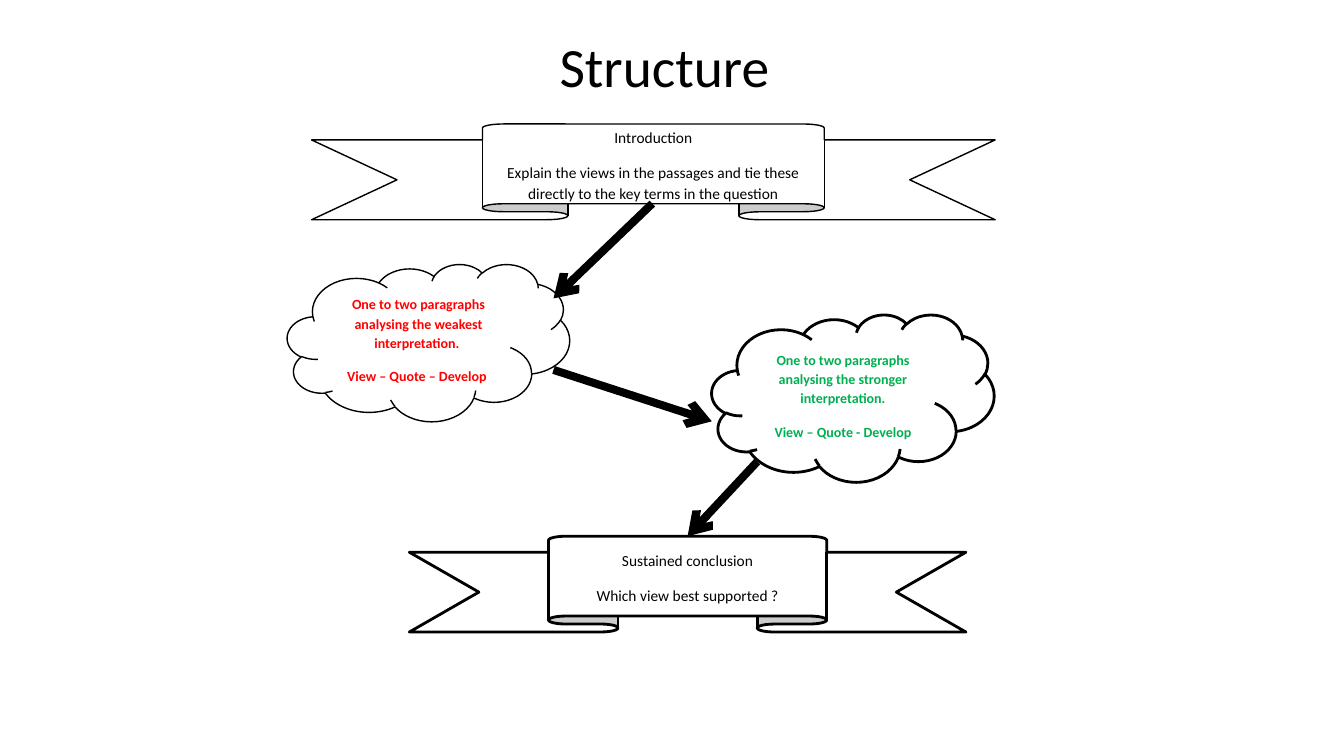
"""Build the essay structure slide: two banners, two clouds and linking arrows."""
from dataclasses import dataclass

from lxml.etree import SubElement
from pptx import Presentation
from pptx.dml.color import RGBColor
from pptx.enum.shapes import MSO_CONNECTOR as CONN, MSO_SHAPE as SHAPE
from pptx.enum.text import MSO_ANCHOR as ANCHOR, MSO_AUTO_SIZE as AUTO, PP_ALIGN as ALIGN
from pptx.oxml.ns import qn
from pptx.util import Inches, Pt

COLORS = {"black": "000000", "white": "FFFFFF", "red": "FF0000", "green": "00B050"}
FRAME = {"word_wrap": True, "auto_size": AUTO.NONE, "vertical_anchor": ANCHOR.MIDDLE}
TITLE_PARA = {"alignment": ALIGN.CENTER, "line_spacing": 0.9}
BODY_PARA = {"alignment": ALIGN.CENTER, "line_spacing": 1.15, "space_after": Pt(10)}


@dataclass
class Step:
    kind: SHAPE
    box: tuple[float, float, float, float]
    line: float
    lines: tuple[str, ...]
    size: float = 11
    color: str = "black"
    bold: bool = False


@dataclass
class Arrow:
    start: tuple[float, float]
    end: tuple[float, float]
    target: int | None = None


STEPS = [
    Step(SHAPE.UP_RIBBON, (3.09, 1.23, 6.78, 0.95), 1, (
        "Introduction",
        "Explain the views in the passages and tie these directly to the key terms in the question")),
    Step(SHAPE.CLOUD, (2.85, 2.62, 2.8, 1.56), 1, (
        "One to two paragraphs analysing the weakest interpretation. ",
        "View – Quote – Develop "), 10, "red", True),
    Step(SHAPE.CLOUD, (7.06, 3.12, 2.8, 1.66), 2, (
        "One to two paragraphs analysing the stronger interpretation.",
        "View – Quote - Develop"), 10, "green", True),
    Step(SHAPE.UP_RIBBON, (4.06, 5.32, 5.52, 0.95), 2, (
        "Sustained conclusion", "Which view best supported ?")),
]
ARROWS = [
    Arrow((6.47, 2.02), (5.49, 2.96)),
    Arrow((5.49, 3.67), (7.06, 4.18)),
    Arrow((7.51, 4.58), (6.82, 5.32), target=3),
]


def rgb(name: str) -> RGBColor:
    """Return the named colour."""
    return RGBColor.from_string(COLORS[name])


def apply(obj: object, values: dict) -> None:
    """Set every attribute in values on obj."""
    for name, value in values.items():
        setattr(obj, name, value)


def write(tf, lines: tuple[str, ...], para: dict, size: float, color: str, bold: bool) -> None:
    """Fill a text frame with one formatted paragraph per line."""
    apply(tf, FRAME)
    for i, text in enumerate(lines):
        p = tf.add_paragraph() if i else tf.paragraphs[0]
        apply(p, para)
        r = p.add_run()
        r.text = text
        apply(r.font, {"name": "Calibri", "size": Pt(size), "bold": bold})
        r.font.color.rgb = rgb(color)


def add_step(s, step: Step):
    """Draw one banner or cloud with its text."""
    sp = s.shapes.add_shape(step.kind, *map(Inches, step.box))
    sp.shadow.inherit = False
    sp.fill.solid()
    sp.fill.fore_color.rgb = rgb("white")
    sp.line.color.rgb = rgb("black")
    sp.line.width = Pt(step.line)
    write(sp.text_frame, step.lines, BODY_PARA, step.size, step.color, step.bold)
    return sp


def add_arrow(s, arrow: Arrow, steps: list) -> None:
    """Draw one thick arrow, joined to the top of its target if it has one."""
    cx = s.shapes.add_connector(CONN.STRAIGHT, *map(Inches, arrow.start + arrow.end))
    if arrow.target is not None:
        cx.end_connect(steps[arrow.target], 0)
    cx.line.color.rgb = rgb("black")
    cx.line.width = Pt(5.75)
    sp_pr = cx.element.spPr
    SubElement(sp_pr.find(qn("a:ln")), qn("a:tailEnd"), type="arrow")
    SubElement(sp_pr, qn("a:effectLst"))


def main() -> None:
    """Build and save the slide."""
    prs = Presentation()
    apply(prs, {"slide_width": Inches(13.33), "slide_height": Inches(7.5)})
    s = prs.slides.add_slide(prs.slide_layouts[5])
    title = s.shapes.title
    box = (2.09, 0.34, 9, 0.69)
    apply(title, dict(zip(("left", "top", "width", "height"), map(Inches, box))))
    write(title.text_frame, ("Structure",), TITLE_PARA, 39.6, "black", False)
    steps = [add_step(s, step) for step in STEPS]
    for arrow in ARROWS:
        add_arrow(s, arrow, steps)
    prs.save("out.pptx")


if __name__ == "__main__":
    main()
